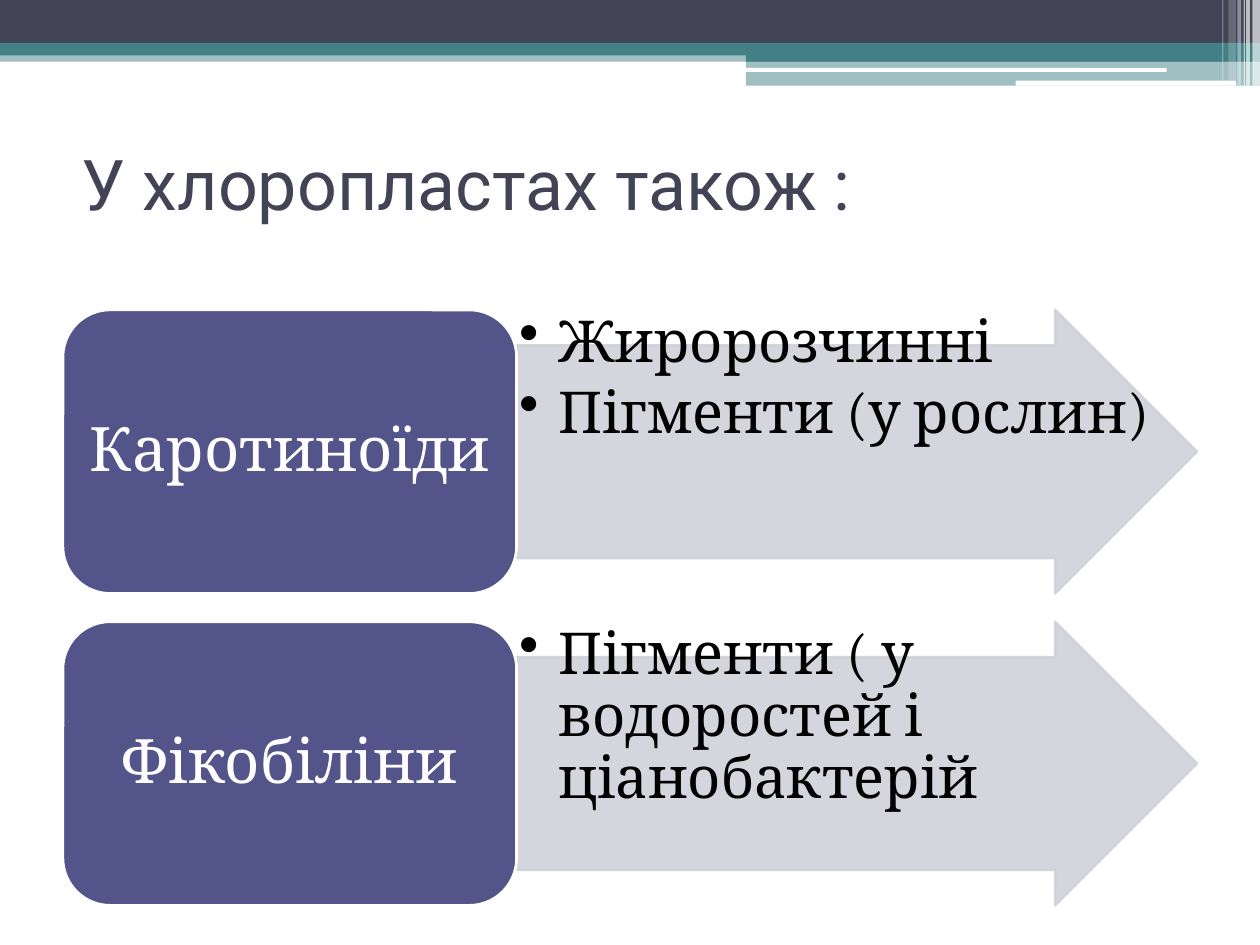
from lxml.etree import SubElement
from pptx import Presentation
from pptx.dml.color import RGBColor
from pptx.enum.shapes import MSO_SHAPE
from pptx.enum.text import MSO_ANCHOR, PP_ALIGN
from pptx.oxml.ns import qn
from pptx.util import Inches, Pt

# Content
TITLE = "У хлоропластах також :"
PIGMENTS = [
    ("Каротиноїди", ["Жиророзчинні", "Пігменти (у рослин)"]),
    ("Фікобіліни", ["Пігменти ( у водоростей і ціанобактерій"]),
]
COLORS = {
    "navy": "424456", "teal": "438086", "white": "FFFFFF",
    "violet": "53548A", "pale": "D1D1DA", "black": "000000",
}

# Header bands: left, top, width, height, colour, opacity in percent
BANDS = [
    (0, 0.4, 10, 0.09, "teal", 50),
    (0, 0, 10, 0.34, "navy", 100),
    (0, 0.34, 10, 0.1, "teal", 100),
    (5.92, 0.39, 4.08, 0.1, "teal", 100),
    (5.92, 0.48, 4.08, 0.2, "teal", 50),
]
RULES = [(5.91, 0.54, 3.35, 0.03), (8.06, 0.64, 1.75, 0.04)]
# Vertical stripes: left, width, height, opacity in percent
STRIPES = [
    (9.94, 0.06, 0.68, 65), (9.89, 0.03, 0.68, 65), (9.87, 0.01, 0.68, 60),
    (9.82, 0.03, 0.68, 40), (9.75, 0.06, 0.64, 20), (9.7, 0.01, 0.64, 30),
]

# Grid of the pigment rows
LEFT, TOP, WIDTH = 0.5, 2.46, 9
LABEL_WIDTH = WIDTH * 0.4
ROW_HEIGHT = 2.25
ROW_STEP = ROW_HEIGHT * 1.1

deck = Presentation()
deck.slide_width, deck.slide_height = Inches(10), Inches(7.5)
page = deck.slides.add_slide(deck.slide_layouts[6])


def color_of(name):
    return RGBColor.from_string(COLORS[name])


def set_opacity(fill_parent, opacity):
    if opacity < 100:
        color = fill_parent.find(qn("a:solidFill"))[0]
        SubElement(color, qn("a:alpha"), val=str(opacity * 1000))


def add_block(kind, area, color, opacity=100, line=None, adjustments=()):
    block = page.shapes.add_shape(kind, *map(Inches, area))
    block.shadow.inherit = False
    for index, value in enumerate(adjustments):
        block.adjustments[index] = value
    block.fill.solid()
    block.fill.fore_color.rgb = color_of(color)
    properties = block.fill._xPr
    set_opacity(properties, opacity)
    if line:
        block.line.color.rgb = color_of(line)
        block.line.width = Pt(1.5)
        set_opacity(properties.find(qn("a:ln")), opacity)
    else:
        block.line.fill.background()
    return block


def write(box, lines, size, font, color, align=PP_ALIGN.LEFT, anchor=MSO_ANCHOR.TOP,
          margins=(0.02, 0.02), spacing=None, after=0, indent=0):
    frame = box.text_frame
    frame.word_wrap = True
    frame.vertical_anchor = anchor
    frame.margin_left = frame.margin_right = Inches(margins[0])
    frame.margin_top = frame.margin_bottom = Inches(margins[1])
    for index, line in enumerate(lines):
        para = frame.add_paragraph() if index else frame.paragraphs[0]
        para.alignment = align
        para.line_spacing = spacing
        para.space_after = Pt(after)
        if indent:
            properties = para._p.get_or_add_pPr()
            properties.set("marL", str(Inches(indent)))
            properties.set("indent", str(-Inches(indent)))
            SubElement(properties, qn("a:buChar"), char="•")
        span = para.add_run()
        span.text = line
        span.font.size, span.font.name = Pt(size), font
        span.font.color.rgb = color_of(color)


# Header decoration
for *area, color, opacity in BANDS:
    add_block(MSO_SHAPE.RECTANGLE, area, color, opacity)
for area in RULES:
    add_block(MSO_SHAPE.ROUNDED_RECTANGLE, area, "white")
for left, width, height, opacity in STRIPES:
    add_block(MSO_SHAPE.RECTANGLE, (left, 0, width, height), "white", opacity)

# Title
title = page.shapes.add_textbox(*map(Inches, (0.55, 0.86, 9, 1.17)))
write(title, [TITLE], 40, "Roboto", "navy", anchor=MSO_ANCHOR.MIDDLE, margins=(0.1, 0.05))

# Pigment rows: an arrow with bullets and a rounded label
for row, (name, facts) in enumerate(PIGMENTS):
    top = TOP + row * ROW_STEP
    arrow_area = (LEFT + LABEL_WIDTH, top, WIDTH - LABEL_WIDTH, ROW_HEIGHT)
    add_block(MSO_SHAPE.RIGHT_ARROW, arrow_area, "pale", 90, "pale", (0.75, 0.5))
    facts_box = page.shapes.add_textbox(*map(Inches, arrow_area))
    write(facts_box, facts, 33, "Cambria", "black", spacing=0.9, after=5, indent=0.31)
    label = add_block(MSO_SHAPE.ROUNDED_RECTANGLE, (LEFT, top, LABEL_WIDTH, ROW_HEIGHT),
                      "violet", line="white")
    write(label, [name], 35, "Cambria", "white", align=PP_ALIGN.CENTER,
          anchor=MSO_ANCHOR.MIDDLE, spacing=0.9)

deck.save("out.pptx")
